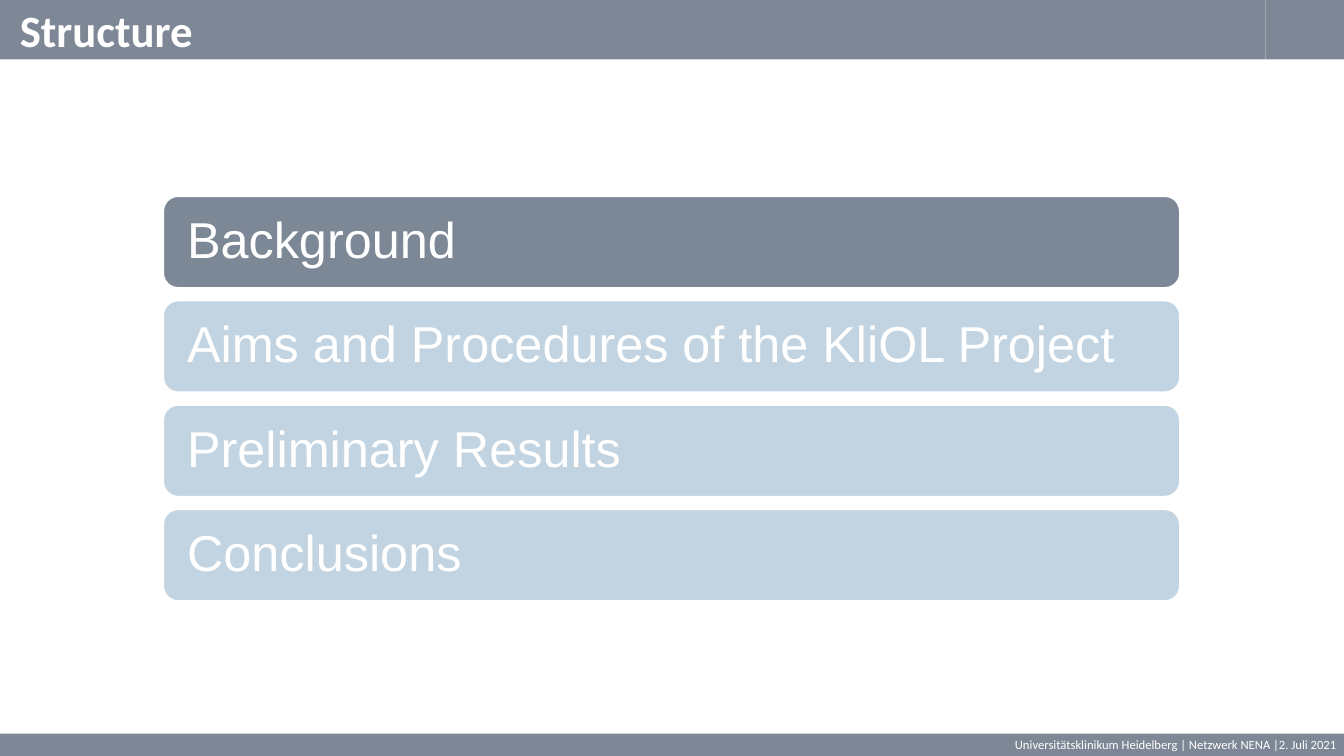
from dataclasses import dataclass

from lxml.etree import SubElement
from pptx import Presentation
from pptx.dml.color import RGBColor
from pptx.enum.shapes import MSO_SHAPE
from pptx.enum.text import MSO_ANCHOR, PP_ALIGN
from pptx.oxml.ns import qn
from pptx.util import Cm, Pt

WHITE = "FFFFFF"
SLATE = "465569"
ACTIVE = "7D8896"
INACTIVE = "C2D4E1"


@dataclass
class Box:
    """A filled shape with one line of text; lengths in cm."""
    left: float
    top: float
    width: float
    height: float
    fill: str
    text: str = ""
    size: float = 18
    font: str = "Calibri"
    bold: bool = False
    align: PP_ALIGN = PP_ALIGN.LEFT
    margin_left: float = 0
    margin_right: float = 0
    line_spacing: float = 1.0
    opacity: int = 100
    outline: float = 0
    shape: MSO_SHAPE = MSO_SHAPE.RECTANGLE


def color(value: str) -> RGBColor:
    return RGBColor.from_string(value)


def draw_box(shapes, box: Box) -> None:
    s = shapes.add_shape(box.shape, Cm(box.left), Cm(box.top), Cm(box.width), Cm(box.height))
    s.shadow.inherit = False
    s.fill.solid()
    s.fill.fore_color.rgb = color(box.fill)
    if box.opacity < 100:
        clr = s.fill._xPr.find(qn("a:solidFill"))[0]
        SubElement(clr, qn("a:alpha"), val=str(box.opacity * 1000))
    if box.outline:
        s.line.color.rgb = color(WHITE)
        s.line.width = Pt(box.outline)
    else:
        s.line.fill.background()
    if not box.text:
        return

    tf = s.text_frame
    tf.text = box.text
    tf.word_wrap = True
    tf.vertical_anchor = MSO_ANCHOR.MIDDLE
    tf.margin_left, tf.margin_right = Cm(box.margin_left), Cm(box.margin_right)
    tf.margin_top = tf.margin_bottom = 0
    p = tf.paragraphs[0]
    p.alignment = box.align
    p.line_spacing = box.line_spacing
    r = p.runs[0]
    r.font.name = box.font
    r.font.size = Pt(box.size)
    r.font.bold = box.bold
    r.font.color.rgb = color(WHITE)


def main() -> None:
    prs = Presentation()
    prs.slide_width, prs.slide_height = Cm(33.87), Cm(19.05)
    shapes = prs.slides.add_slide(prs.slide_layouts[6]).shapes

    # Header and footer bars
    bars = [
        Box(31.9, 0, 2, 1.5, SLATE, opacity=70),
        Box(0, 18.49, 33.87, 0.56, SLATE,
            "Universitätsklinikum Heidelberg | Netzwerk NENA |2. Juli 2021",
            size=9, align=PP_ALIGN.RIGHT, margin_right=0.2, opacity=70),
        Box(0, 0, 31.9, 1.5, SLATE, "Structure", size=32, bold=True,
            margin_left=0.5, margin_right=0.5, opacity=70),
    ]

    # Agenda, with the current topic highlighted
    topics = ["Background", "Aims and Procedures of the KliOL Project",
              "Preliminary Results", "Conclusions"]
    agenda = [
        Box(4.1, 4.93 + 2.63 * i, 25.65, 2.34, INACTIVE if i else ACTIVE, topic,
            size=36, font="Arial", margin_left=0.5, margin_right=0.5,
            line_spacing=0.9, outline=2, shape=MSO_SHAPE.ROUNDED_RECTANGLE)
        for i, topic in enumerate(topics)
    ]

    for box in bars + agenda:
        draw_box(shapes, box)

    prs.save("out.pptx")


if __name__ == "__main__":
    main()
